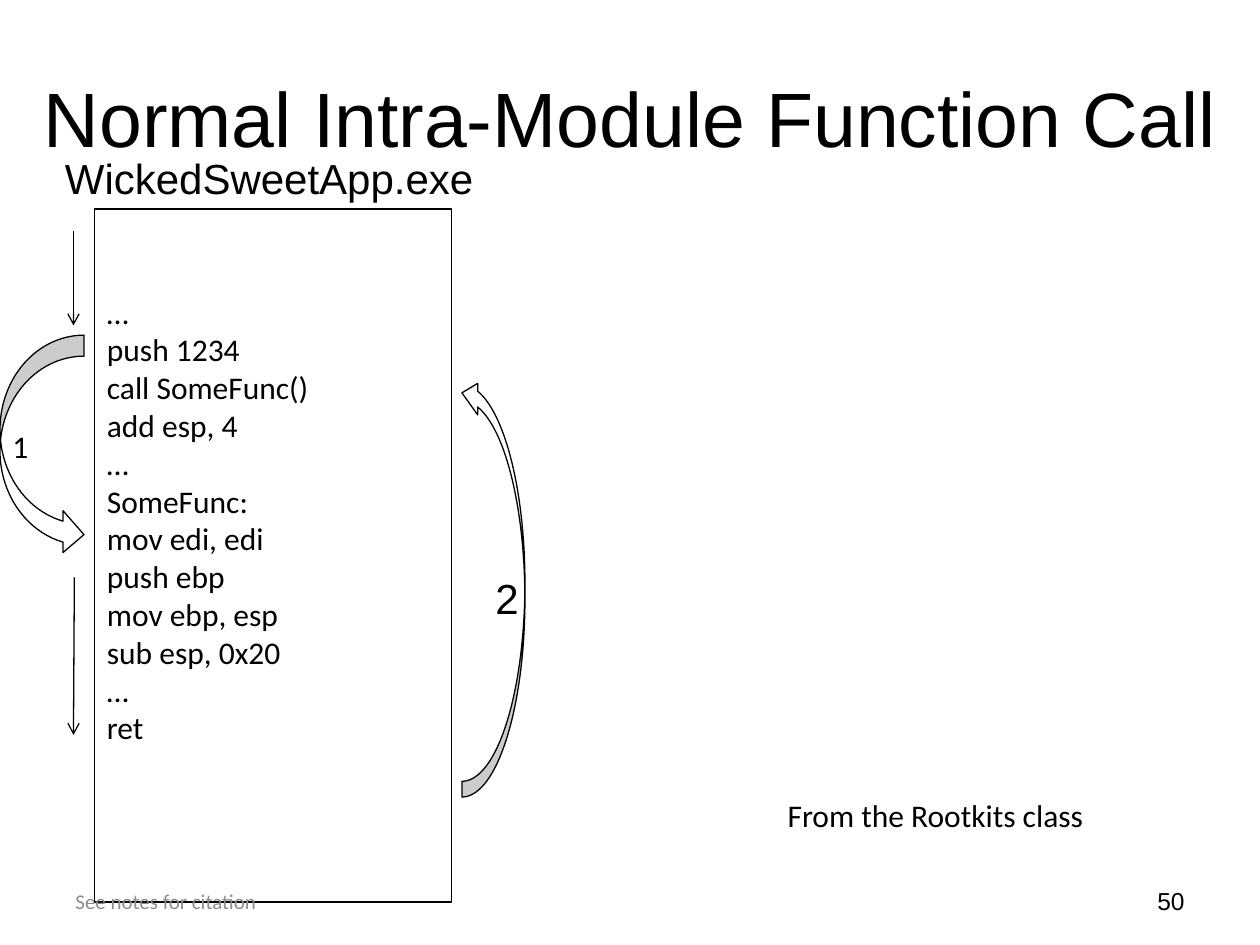
from dataclasses import dataclass

from lxml.etree import SubElement
from pptx import Presentation
from pptx.dml.color import RGBColor
from pptx.enum.shapes import MSO_CONNECTOR, MSO_SHAPE
from pptx.enum.text import MSO_ANCHOR, MSO_AUTO_SIZE, PP_ALIGN
from pptx.oxml.ns import qn
from pptx.util import Pt

COLORS = {"black": "000000", "white": "FFFFFF", "gray": "8C8C8C"}
LINE_WIDTH = Pt(0.75)
CODE = """…
push 1234
call SomeFunc()
add esp, 4
…
SomeFunc:
mov edi, edi
push ebp
mov ebp, esp
sub esp, 0x20
…
ret"""


@dataclass
class Box:
    x: float
    y: float
    w: float
    h: float

    def emu(self) -> tuple:
        return Pt(self.x), Pt(self.y), Pt(self.w), Pt(self.h)


@dataclass
class Label:
    text: str
    box: Box
    size: float
    font: str = "Calibri"
    color: str = "black"
    align: PP_ALIGN = PP_ALIGN.LEFT
    anchor: MSO_ANCHOR = MSO_ANCHOR.TOP
    wrap: bool = True


@dataclass
class Flow:
    x1: float
    y1: float
    x2: float
    y2: float


def rgb(name: str) -> RGBColor:
    return RGBColor.from_string(COLORS[name])


def write(sp, text: str, *, size: float = 18, font: str = "Calibri",
          color: str = "black", align=PP_ALIGN.LEFT,
          anchor=MSO_ANCHOR.MIDDLE, wrap: bool = True) -> None:
    tf = sp.text_frame
    tf.text = text
    tf.word_wrap = wrap
    tf.auto_size = MSO_AUTO_SIZE.NONE
    tf.vertical_anchor = anchor
    for p in tf.paragraphs:
        p.alignment = align
        for r in p.runs:
            r.font.size = Pt(size)
            r.font.name = font
            r.font.color.rgb = rgb(color)


def add_outlined(shapes, kind: MSO_SHAPE, box: Box):
    sp = shapes.add_shape(kind, *box.emu())
    sp.shadow.inherit = False
    sp.fill.solid()
    sp.fill.fore_color.rgb = rgb("white")
    sp.line.color.rgb = rgb("black")
    sp.line.width = LINE_WIDTH
    return sp


def add_label(shapes, label: Label) -> None:
    sp = shapes.add_textbox(*label.box.emu())
    write(sp, label.text, size=label.size, font=label.font, color=label.color,
          align=label.align, anchor=label.anchor, wrap=label.wrap)


def add_flow(shapes, flow: Flow) -> None:
    cx = shapes.add_connector(MSO_CONNECTOR.STRAIGHT, Pt(flow.x1), Pt(flow.y1),
                              Pt(flow.x2), Pt(flow.y2))
    cx.line.color.rgb = rgb("black")
    cx.line.width = LINE_WIDTH
    SubElement(cx.line._get_or_add_ln(), qn("a:tailEnd"), type="arrow")
    SubElement(cx._element.spPr, qn("a:effectLst"))


def main() -> None:
    prs = Presentation()
    prs.slide_width, prs.slide_height = Pt(720), Pt(540)
    s = prs.slides.add_slide(prs.slide_layouts[5])

    # Title
    title = s.shapes.title
    title.left, title.top, title.width, title.height = Box(16.5, 21.6, 687.6, 90).emu()
    write(title, "Normal Intra-Module Function Call", size=44, font="Arial",
          align=PP_ALIGN.CENTER)

    # Module with its code, raised above the middle by the bottom inset
    module = add_outlined(s.shapes, MSO_SHAPE.RECTANGLE, Box(54, 119.5, 204, 396))
    write(module, CODE)
    module.text_frame.margin_bottom = Pt(45)

    # Step 1: the call
    call = add_outlined(s.shapes, MSO_SHAPE.CURVED_RIGHT_ARROW, Box(0, 191.5, 48, 126))
    write(call, "1")

    # Step 2: the return, grouped with its number
    group = s.shapes.add_group_shape()
    back = add_outlined(group.shapes, MSO_SHAPE.CURVED_LEFT_ARROW,
                        Box(264, 215.5, 36, 240))
    back._element.spPr.find(qn("a:xfrm")).set("flipV", "1")
    add_label(group.shapes, Label("2", Box(276, 323.5, 28, 36), 24, "Arial", wrap=False))

    # Execution order beside the code
    for flow in (Flow(42.5, 330, 42, 420), Flow(42, 132, 42, 186)):
        add_flow(s.shapes, flow)

    # Module name, remark and footer
    for label in (
        Label("WickedSweetApp.exe", Box(30, 83.5, 250.5, 36.5), 24, "Arial", wrap=False),
        Label("From the Rootkits class", Box(443, 451.5, 241, 29), 18),
        Label("See notes for citation", Box(36, 500.5, 168, 28.8), 12, color="gray",
              anchor=MSO_ANCHOR.MIDDLE),
        Label("50", Box(516, 500.5, 168, 28.8), 14, "Arial", align=PP_ALIGN.RIGHT,
              anchor=MSO_ANCHOR.MIDDLE),
    ):
        add_label(s.shapes, label)

    prs.save("out.pptx")


if __name__ == "__main__":
    main()
